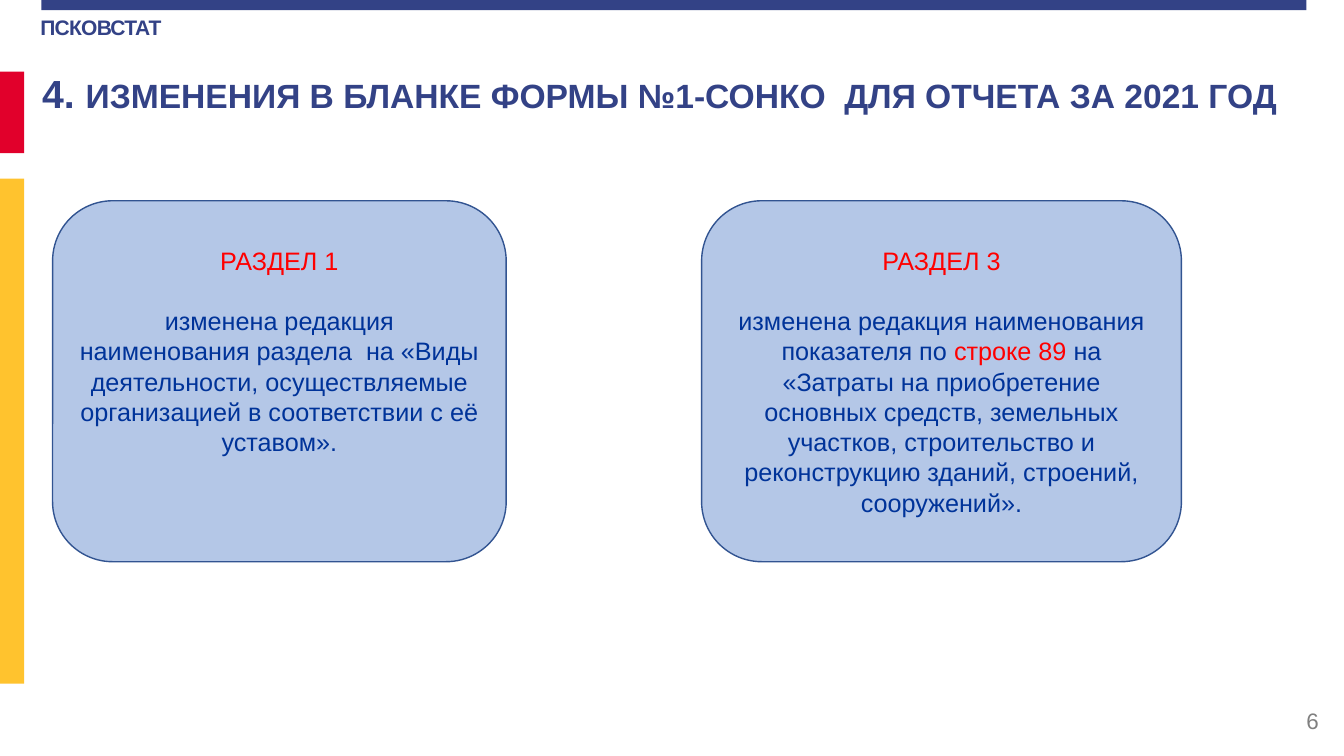
"""Build the slide on changes in the 1-СОНКО form."""
from dataclasses import dataclass

from pptx import Presentation
from pptx.dml.color import RGBColor
from pptx.enum.shapes import MSO_SHAPE
from pptx.enum.text import MSO_ANCHOR, PP_ALIGN
from pptx.util import Pt

RECTANGLE = MSO_SHAPE.RECTANGLE
ROUNDED = MSO_SHAPE.ROUNDED_RECTANGLE
TOP, MIDDLE = MSO_ANCHOR.TOP, MSO_ANCHOR.MIDDLE
LEFT, CENTER, RIGHT = PP_ALIGN.LEFT, PP_ALIGN.CENTER, PP_ALIGN.RIGHT


@dataclass(frozen=True)
class Theme:
    font: str = "Arial"
    navy: str = "334286"
    crimson: str = "E1002B"
    amber: str = "FFC32E"
    panel: str = "B4C7E7"
    outline: str = "325491"
    accent: str = "FF0000"
    body: str = "003399"
    grey: str = "808080"
    title_number: float = 28
    title: float = 24
    section: float = 18
    section_line: float = 21.6
    page: float = 16
    agency: float = 15


@dataclass(frozen=True)
class Box:
    left: float
    top: float
    width: float
    height: float

    def lengths(self):
        return Pt(self.left), Pt(self.top), Pt(self.width), Pt(self.height)


@dataclass(frozen=True)
class Section:
    left: float
    width: float
    heading: str
    change: tuple[tuple[str, str], ...]


THEME = Theme()
SECTIONS_TOP, SECTIONS_HEIGHT = 143.4, 257.8
BARS = (
    (Box(29.5, 0, 903.6, 7.2), THEME.navy),
    (Box(0, 51.1, 17.3, 58.3), THEME.crimson),
    (Box(0, 127.6, 17.3, 360.7), THEME.amber),
)
SECTIONS = (
    Section(37.6, 324, "РАЗДЕЛ 1", (
        ("изменена редакция наименования раздела  на «Виды деятельности, "
         "осуществляемые организацией в соответствии с её уставом».", THEME.body),
    )),
    Section(501.2, 342.7, "РАЗДЕЛ 3", (
        ("изменена редакция наименования показателя по ", THEME.body),
        ("строке 89 ", THEME.accent),
        ("на «Затраты на приобретение основных средств, земельных участков, "
         "строительство и реконструкцию зданий, строений, сооружений».", THEME.body),
    )),
)


def add_run(paragraph, text: str, *, size: float, color: str,
            bold: bool = False, spacing: float = 0) -> None:
    """Append one formatted run; spacing is tracking in points."""
    run = paragraph.add_run()
    run.text = text
    run.font.name = THEME.font
    run.font.size = Pt(size)
    run.font.bold = bold
    run.font.color.rgb = RGBColor.from_string(color)
    if spacing:
        run.font._element.set("spc", str(round(spacing * 100)))


def set_frame(shape, *, insets: tuple[float, float, float, float] = (7.2, 3.6, 7.2, 3.6),
              anchor: MSO_ANCHOR = TOP, align: PP_ALIGN = LEFT):
    """Prepare a wrapped text frame and return its first paragraph."""
    frame = shape.text_frame
    frame.word_wrap = True
    frame.vertical_anchor = anchor
    (frame.margin_left, frame.margin_top,
     frame.margin_right, frame.margin_bottom) = map(Pt, insets)
    frame.paragraphs[0].alignment = align
    return frame.paragraphs[0]


def add_block(slide, kind: MSO_SHAPE, box: Box, fill: str, outline: str = ""):
    """Add a flat filled shape, outlined when a colour is given."""
    block = slide.shapes.add_shape(kind, *box.lengths())
    block.shadow.inherit = False
    block.fill.solid()
    block.fill.fore_color.rgb = RGBColor.from_string(fill)
    if outline:
        block.line.color.rgb = RGBColor.from_string(outline)
        block.line.width = Pt(1)
    else:
        block.line.fill.background()
    return block


def add_section(slide, section: Section) -> None:
    """Draw one panel with its heading and the change it describes."""
    box = Box(section.left, SECTIONS_TOP, section.width, SECTIONS_HEIGHT)
    panel = add_block(slide, ROUNDED, box, THEME.panel, THEME.outline)
    heading = set_frame(panel, insets=(6, 19, 6, 3.6), align=CENTER)
    add_run(heading, section.heading, size=THEME.section, color=THEME.accent)
    change = panel.text_frame.add_paragraph()
    change.alignment = CENTER
    change.space_before = Pt(THEME.section_line)
    for text, color in section.change:
        add_run(change, text, size=THEME.section, color=color)
    for paragraph in (heading, change):
        paragraph.line_spacing = Pt(THEME.section_line)


def main() -> None:
    """Assemble and save the slide."""
    deck = Presentation()
    deck.slide_width, deck.slide_height = Pt(960), Pt(540)
    slide = deck.slides.add_slide(deck.slide_layouts[6])

    agency = slide.shapes.add_textbox(*Box(28.8, 9.4, 106, 19.4).lengths())
    add_run(set_frame(agency, insets=(0, 0.7, 0, 0)), "ПСКОВСТАТ",
            size=THEME.agency, color=THEME.navy, bold=True, spacing=-0.5)

    for box, color in BARS:
        add_block(slide, RECTANGLE, box, color)

    page = slide.shapes.add_textbox(*Box(733, 500.4, 216, 28.8).lengths())
    add_run(set_frame(page, anchor=MIDDLE, align=RIGHT), "6",
            size=THEME.page, color=THEME.grey)

    title = slide.shapes.add_textbox(*Box(23, 46, 910, 56.9).lengths())
    line = set_frame(title)
    add_run(line, "4. ", size=THEME.title_number, color=THEME.navy, bold=True)
    add_run(line, "ИЗМЕНЕНИЯ В БЛАНКЕ ФОРМЫ №1-СОНКО  ДЛЯ ОТЧЕТА ЗА 2021 ГОД",
            size=THEME.title, color=THEME.navy, bold=True)

    for section in SECTIONS:
        add_section(slide, section)
    deck.save("out.pptx")


if __name__ == "__main__":
    main()
